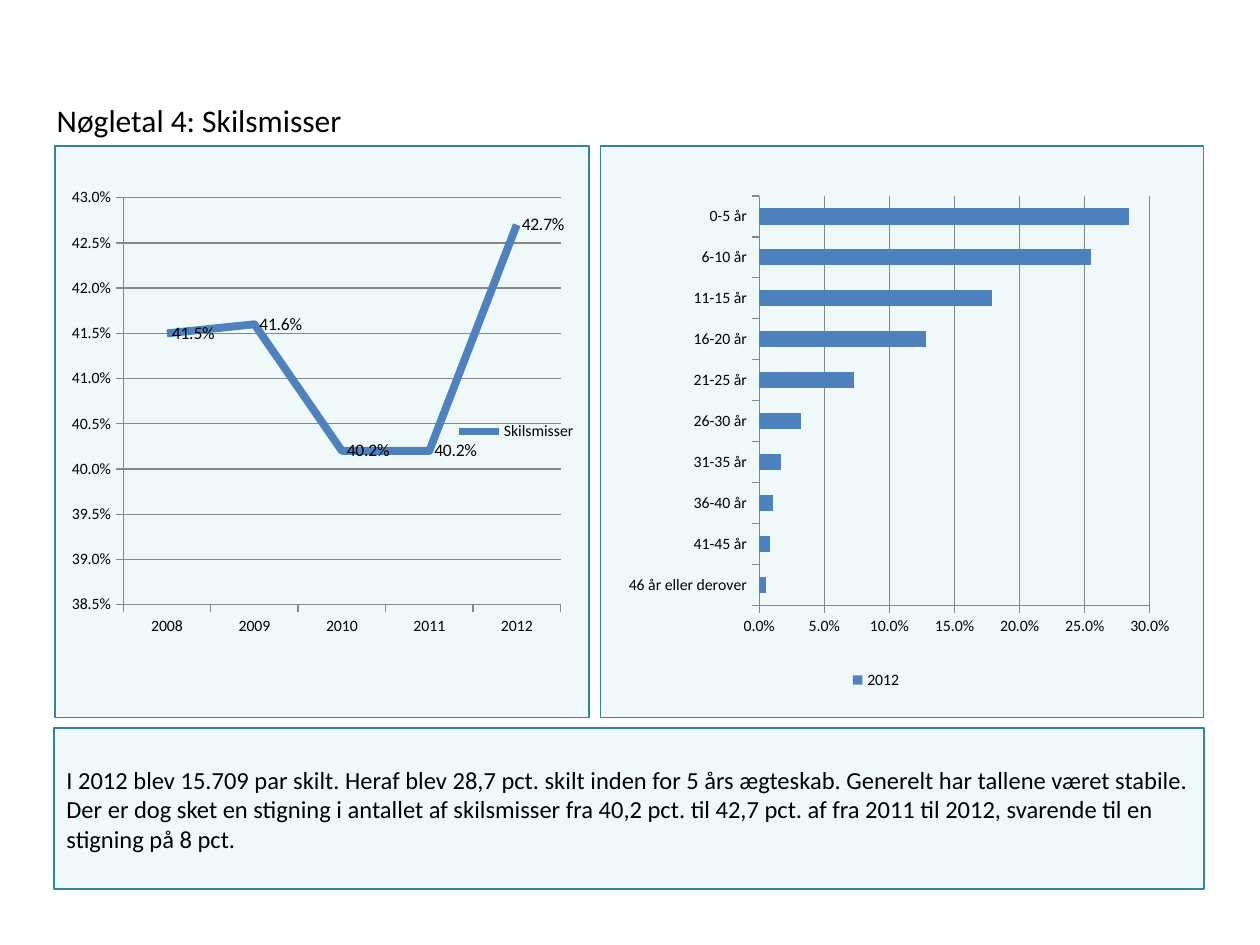
from dataclasses import dataclass

from lxml import etree
from pptx import Presentation
from pptx import util as u
from pptx.chart.data import CategoryChartData
from pptx.dml.color import RGBColor
from pptx.enum import chart as ch, shapes, text
from pptx.oxml import parse_xml
from pptx.oxml.ns import nsdecls, qn


@dataclass(frozen=True)
class Theme:
    """Colours, font and type sizes of the slide."""
    font: str = "Calibri"
    ink: str = "000000"
    panel: str = "F0F9FA"
    border: str = "31859C"
    series: str = "4F81BD"
    grid: str = "878787"
    title_size: int = 18
    body_size: int = 14
    label_size: int = 10
    axis_size: int = 9


THEME = Theme()


def style_font(font, size):
    """Apply the theme font and ink at the given size."""
    font.name = THEME.font
    font.size = u.Pt(size)
    font.color.rgb = RGBColor.from_string(THEME.ink)


def style_line(line, color, width):
    """Give a line a solid colour and a width in points."""
    line.color.rgb = RGBColor.from_string(color)
    line.width = u.Pt(width)


def write_text(frame, words, size):
    """Fill a text frame with one left-aligned, vertically centred paragraph."""
    frame.text = words
    frame.word_wrap = True
    frame.vertical_anchor = text.MSO_ANCHOR.MIDDLE
    paragraph = frame.paragraphs[0]
    paragraph.alignment = text.PP_ALIGN.LEFT
    style_font(paragraph.runs[0].font, size)


def manual_layout(**fractions):
    """Return a chart layout element placed by fractions of the chart."""
    layout = etree.Element(qn("c:layout"))
    manual = etree.SubElement(layout, qn("c:manualLayout"))
    modes = {"layoutTarget": "inner"} if "w" in fractions else {}
    modes.update(xMode="edge", yMode="edge")
    for tag, value in {**modes, **fractions}.items():
        etree.SubElement(manual, qn(f"c:{tag}")).set("val", str(value))
    return layout


def add_title(slide, box, words):
    """Place and fill the title placeholder."""
    title = slide.shapes.title
    title.left, title.top, title.width, title.height = box
    write_text(title.text_frame, words, THEME.title_size)


def add_chart_panel(slide, box, kind, name, points, scale, plot_area, legend_at):
    """Add a framed chart with one percentage series and return its plot."""
    data = CategoryChartData(number_format="0.0%")
    data.categories = list(points)
    data.add_series(name, list(points.values()))
    chart = slide.shapes.add_chart(kind, *box, data).chart
    chart.has_title = False
    style_font(chart.font, THEME.axis_size)

    chart.has_legend = True
    chart.legend.position = ch.XL_LEGEND_POSITION.RIGHT
    chart.legend.include_in_layout = False
    style_font(chart.legend.font, THEME.axis_size)

    for axis in (chart.category_axis, chart.value_axis):
        axis.major_tick_mark = ch.XL_TICK_MARK.OUTSIDE
        axis.minor_tick_mark = ch.XL_TICK_MARK.NONE
        style_font(axis.tick_labels.font, THEME.axis_size)
        style_line(axis.format.line, THEME.grid, 0.75)
    values = chart.value_axis
    values.minimum_scale, values.maximum_scale, values.major_unit = scale
    values.has_major_gridlines = True
    style_line(values.major_gridlines.format.line, THEME.grid, 0.75)
    values.tick_labels.number_format = "0.0%"
    values.tick_labels.number_format_is_linked = False

    space = chart.element
    plot_node = space.find(".//" + qn("c:plotArea"))
    for old in plot_node.findall(qn("c:layout")):
        plot_node.remove(old)
    plot_node.insert(0, manual_layout(**dict(zip("xywh", plot_area))))
    legend_position = space.find(".//" + qn("c:legendPos"))
    legend_position.addnext(manual_layout(**dict(zip("xy", legend_at))))
    space.find(qn("c:chart")).addnext(parse_xml(
        f'<c:spPr {nsdecls("c", "a")}>'
        f'<a:solidFill><a:srgbClr val="{THEME.panel}"/></a:solidFill>'
        f'<a:ln w="{u.Pt(1)}"><a:solidFill><a:srgbClr val="{THEME.border}"/>'
        "</a:solidFill></a:ln></c:spPr>"))

    plot = chart.plots[0]
    plot.vary_by_categories = False
    return plot


def add_divorce_trend(slide, box):
    """Add the line chart of the yearly divorce rate."""
    rates = {"2008": 0.415, "2009": 0.416, "2010": 0.402,
             "2011": 0.402, "2012": 0.427}
    plot = add_chart_panel(
        slide, box, ch.XL_CHART_TYPE.LINE, "Skilsmisser", rates,
        (0.385, 0.43, 0.005), (0.128, 0.091, 0.819, 0.712), (0.42, 0.9))
    trend = plot.series[0]
    trend.smooth = False
    trend.marker.style = ch.XL_MARKER_STYLE.NONE
    style_line(trend.format.line, THEME.series, 4.5)
    labels = trend.data_labels
    labels.show_value = True
    labels.position = ch.XL_LABEL_POSITION.RIGHT
    labels.number_format = "0.0%"
    labels.number_format_is_linked = False
    style_font(labels.font, THEME.label_size)


def add_marriage_lengths(slide, box):
    """Add the bar chart of divorces by length of marriage."""
    shares = {"46 år eller derover": 0.005, "41-45 år": 0.008,
              "36-40 år": 0.011, "31-35 år": 0.017, "26-30 år": 0.032,
              "21-25 år": 0.073, "16-20 år": 0.128, "11-15 år": 0.179,
              "6-10 år": 0.255, "0-5 år": 0.284}
    plot = add_chart_panel(
        slide, box, ch.XL_CHART_TYPE.BAR_CLUSTERED, "2012", shares,
        (0, 0.3, 0.05), (0.263, 0.088, 0.648, 0.716), (0.41, 0.91))
    plot.gap_width = 150
    fill = plot.series[0].format.fill
    fill.solid()
    fill.fore_color.rgb = RGBColor.from_string(THEME.series)


def add_summary(slide, box, words):
    """Add the framed conclusion below the charts."""
    summary = slide.shapes.add_shape(shapes.MSO_SHAPE.RECTANGLE, *box)
    summary.shadow.inherit = False
    summary.fill.solid()
    summary.fill.fore_color.rgb = RGBColor.from_string(THEME.panel)
    style_line(summary.line, THEME.border, 1)
    write_text(summary.text_frame, words, THEME.body_size)


def main():
    """Build and save the slide."""
    deck = Presentation()
    deck.slide_width, deck.slide_height = u.Cm(25.4), u.Cm(19.05)
    slide = deck.slides.add_slide(deck.slide_layouts[5])

    left, width, gap = u.Cm(1.09), u.Cm(23.19), u.Cm(0.2)
    chart_top, chart_height, trend_width = u.Cm(2.92), u.Cm(11.56), u.Cm(10.8)
    lengths_left = left + trend_width + gap
    lengths_width = left + width - lengths_left

    add_title(slide, (u.Cm(0.89), u.Cm(1.73), u.Cm(22.86), u.Cm(1.37)),
              "Nøgletal 4: Skilsmisser")
    add_divorce_trend(slide, (left, chart_top, trend_width, chart_height))
    add_marriage_lengths(
        slide, (lengths_left, chart_top, lengths_width, chart_height))
    add_summary(
        slide, (left, chart_top + chart_height + gap, width, u.Cm(3.25)),
        "I 2012 blev 15.709 par skilt. Heraf blev 28,7 pct. skilt inden for "
        "5 års ægteskab. Generelt har tallene været stabile. Der er dog sket "
        "en stigning i antallet af skilsmisser fra 40,2 pct. til 42,7 pct. af "
        "fra 2011 til 2012, svarende til en stigning på 8 pct.")
    deck.save("out.pptx")


if __name__ == "__main__":
    main()
